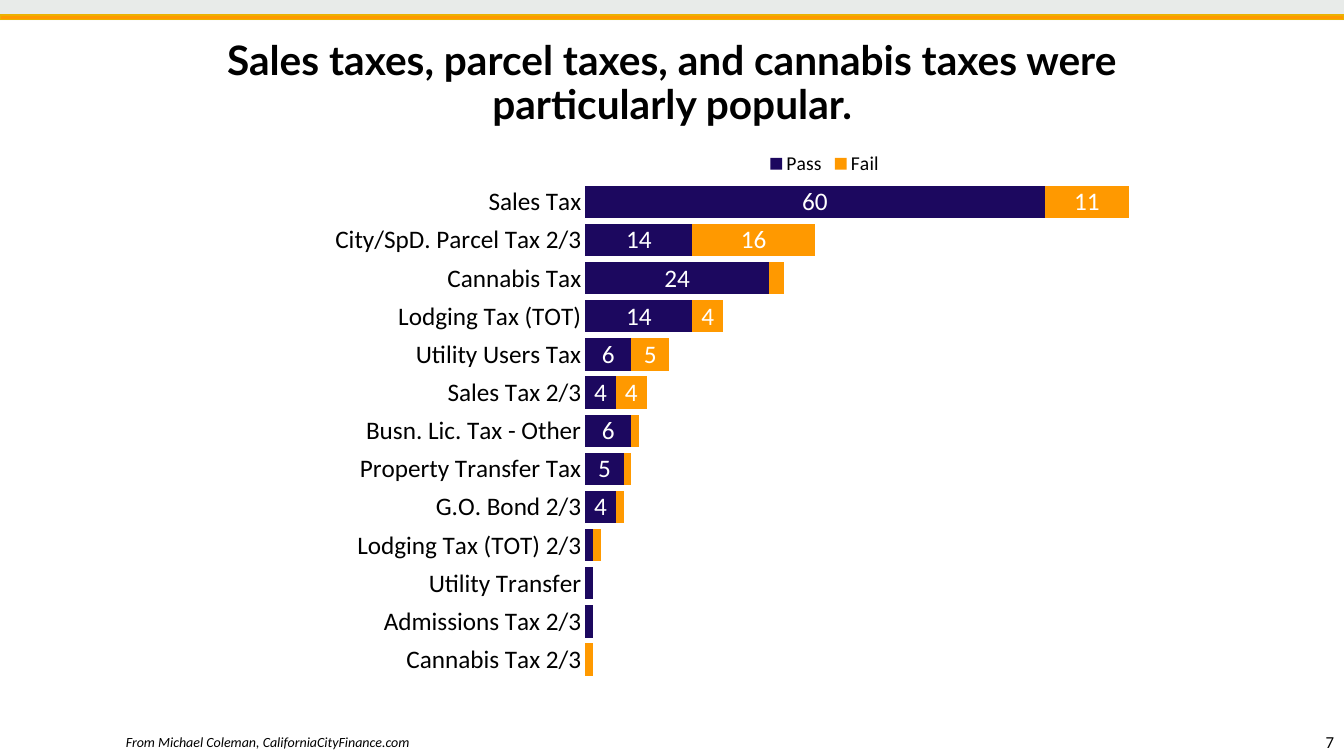
from lxml.etree import SubElement
from pptx import Presentation
from pptx.chart.data import CategoryChartData
from pptx.dml.color import RGBColor
from pptx.enum.chart import (XL_CHART_TYPE, XL_LABEL_POSITION,
                             XL_LEGEND_POSITION, XL_TICK_MARK)
from pptx.enum.shapes import MSO_SHAPE
from pptx.enum.text import MSO_ANCHOR, PP_ALIGN
from pptx.oxml import parse_xml
from pptx.oxml.ns import nsdecls, qn
from pptx.util import Pt

BLACK = RGBColor(0, 0, 0)
WHITE = RGBColor(255, 255, 255)
GREY = RGBColor(0xE8, 0xEB, 0xE9)
NAVY = RGBColor(0x1C, 0x08, 0x5F)
ORANGE = RGBColor(0xFF, 0x99, 0x00)
GOLD = RGBColor(0xEB, 0xB2, 0x01)


def add_text(box, words, font, size, align=PP_ALIGN.LEFT, anchor=MSO_ANCHOR.TOP):
    """Add a one-paragraph text box; return its paragraph and run."""
    frame = slide.shapes.add_textbox(*map(Pt, box)).text_frame
    frame.word_wrap = True
    frame.vertical_anchor = anchor
    para = frame.paragraphs[0]
    para.alignment = align
    run = para.add_run()
    run.text = words
    run.font.name = font
    run.font.size = Pt(size)
    run.font.color.rgb = BLACK
    return para, run


def set_layout(parent, index, **sides):
    """Fix the place of a chart part, in fractions of the chart."""
    for old in parent.findall(qn("c:layout")):
        parent.remove(old)
    layout = parse_xml(f"<c:layout {nsdecls('c')}/>")
    manual = SubElement(layout, qn("c:manualLayout"))
    if "w" in sides:
        SubElement(manual, qn("c:layoutTarget")).set("val", "inner")
    for axis in "xy":
        SubElement(manual, qn(f"c:{axis}Mode")).set("val", "edge")
    for side, value in sides.items():
        SubElement(manual, qn(f"c:{side}")).set("val", str(value))
    parent.insert(index, layout)


deck = Presentation()
deck.slide_width, deck.slide_height = Pt(960), Pt(540)
slide = deck.slides.add_slide(deck.slide_layouts[6])

# Top band
for top, height, fill, edge in [(0, 14.4, GREY, None), (10.8, 3.2, ORANGE, GOLD)]:
    band = slide.shapes.add_shape(MSO_SHAPE.RECTANGLE, 0, Pt(top), Pt(960), Pt(height))
    band.shadow.inherit = False
    band.fill.solid()
    band.fill.fore_color.rgb = fill
    if edge:
        band.line.color.rgb = edge
        band.line.width = Pt(1)
    else:
        band.line.fill.background()

# Title, source and page number
para, run = add_text(
    (153.4, 25.2, 653.8, 90),
    "Sales taxes, parcel taxes, and cannabis taxes were particularly popular.",
    "Lato", 29, PP_ALIGN.CENTER)
para.line_spacing = 0.9
run.font.bold = True

para, run = add_text((82.8, 496.8, 850.3, 43.2),
                     "From Michael Coleman, CaliforniaCityFinance.com",
                     "Calibri", 10, anchor=MSO_ANCHOR.BOTTOM)
para.line_spacing = 0.9
run.font.italic = True

add_text((818, 519, 142, 21), "7", "Calibri", 12, PP_ALIGN.RIGHT)

# Chart: tax, passed, failed
TAXES = [
    ("Sales Tax", 60, 11),
    ("City/SpD. Parcel Tax 2/3", 14, 16),
    ("Cannabis Tax", 24, 2),
    ("Lodging Tax (TOT)", 14, 4),
    ("Utility Users Tax", 6, 5),
    ("Sales Tax 2/3", 4, 4),
    ("Busn. Lic. Tax - Other", 6, 1),
    ("Property Transfer Tax", 5, 1),
    ("G.O. Bond 2/3", 4, 1),
    ("Lodging Tax (TOT) 2/3", 1, 1),
    ("Utility Transfer", 1, 0),
    ("Admissions Tax 2/3", 1, 0),
    ("Cannabis Tax 2/3", 0, 1),
]
names, passed, failed = zip(*TAXES)
data = CategoryChartData()
data.categories = names
data.add_series("Pass", passed)
data.add_series("Fail", failed)
chart = slide.shapes.add_chart(XL_CHART_TYPE.BAR_STACKED, Pt(120.2), Pt(97.2),
                               Pt(709.2), Pt(416.9), data).chart
chart.has_title = False
chart.font.name = "Calibri"
chart.font.size = Pt(18)
chart.font.color.rgb = BLACK

chart.has_legend = True
legend = chart.legend
legend.position = XL_LEGEND_POSITION.TOP
legend.include_in_layout = False
legend.font.size = Pt(14)

rows = chart.category_axis
rows.reverse_order = True
rows.major_tick_mark = XL_TICK_MARK.NONE
rows.format.line.fill.background()
scale = chart.value_axis
scale.visible = False
scale.has_major_gridlines = False
scale.minimum_scale, scale.maximum_scale = 0, 71.3

plot = chart.plots[0]
plot.gap_width, plot.overlap = 18, 100
plot.vary_by_categories = False
for series, color in zip(plot.series, (NAVY, ORANGE)):
    series.format.fill.solid()
    series.format.fill.fore_color.rgb = color
    series.data_labels.show_value = False
    for i, count in enumerate(series.values):
        if count >= 4:  # narrower bars have no room for a label
            label = series.points[i].data_label
            label.font.size = Pt(18)
            label.font.color.rgb = WHITE
            label.position = XL_LABEL_POSITION.CENTER

area = chart.element.find(".//" + qn("c:plotArea"))
set_layout(area, 0, x=0.42, y=0.08, w=0.55, h=0.85)
set_layout(area.getparent().find(qn("c:legend")), 1, x=0.6, y=0.02)

deck.save("out.pptx")
